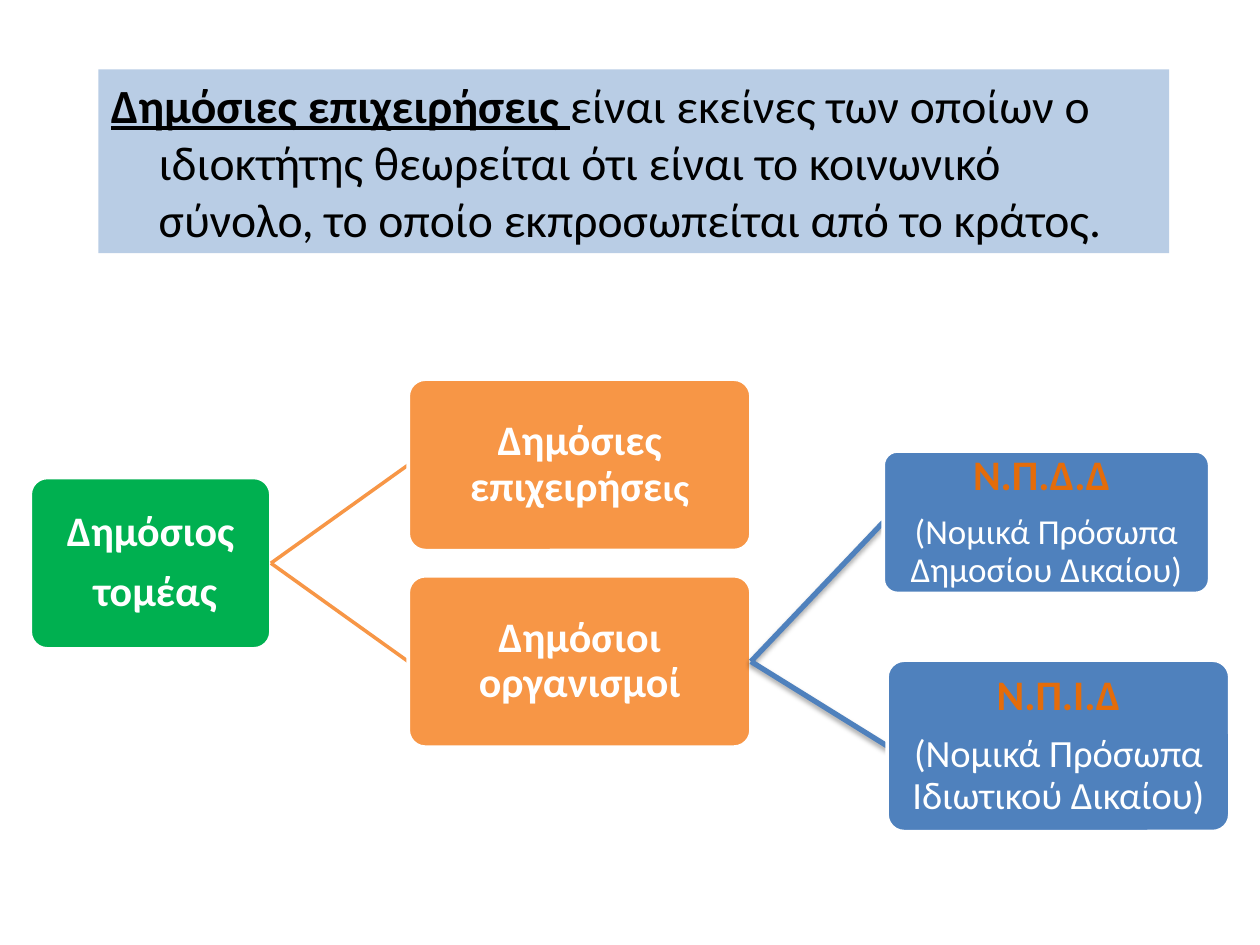
from lxml.etree import SubElement
from pptx import Presentation
from pptx.dml.color import RGBColor
from pptx.enum.shapes import MSO_CONNECTOR as Connector, MSO_SHAPE as Shape
from pptx.enum.text import MSO_ANCHOR as Anchor, MSO_AUTO_SIZE as AutoSize, PP_ALIGN as Align
from pptx.oxml.ns import qn
from pptx.util import Inches, Pt

FONT = "Calibri"
WHITE, BLACK, GREEN, ORANGE, BLUE = "FFFFFF", "000000", "00B050", "F79646", "4F81BD"
ACCENT, PALE_BLUE = "E46C0A", "B9CDE5"
HEADING = {"size": 24, "bold": True, "color": WHITE}
LEGAL = {**HEADING, "color": ACCENT}

DEFINITION = [
    ("Δημόσιες επιχειρήσεις ", {"size": 27.2, "color": BLACK, "bold": True, "underline": True}),
    ("είναι εκείνες των οποίων ο ιδιοκτήτης θεωρείται ότι είναι το κοινωνικό "
     "σύνολο, το οποίο εκπροσωπείται από το κράτος.", {"size": 27.2, "color": BLACK}),
]

# Each node: name, parent, fill, (left, top, width, height), paragraphs of spans
NODES = [
    ("sector", None, GREEN, (0.24, 3.79, 1.91, 1.36),
     [[("Δημόσιος", HEADING)], [(" τομέας", HEADING)]]),
    ("enterprises", "sector", ORANGE, (3.24, 3.01, 2.72, 1.36),
     [[("Δημόσιες επιχειρήσε", HEADING), ("ις", {**HEADING, "size": 22})]]),
    ("organisations", "sector", ORANGE, (3.24, 4.57, 2.72, 1.36),
     [[("Δημόσιοι οργανισμοί", HEADING)]]),
    ("public law", "organisations", BLUE, (7.01, 3.58, 2.59, 1.13),
     [[("Ν.Π.Δ.Δ ", LEGAL)],
      [("(Νομικά Πρόσωπα Δημοσίου Δικαίου)", {"size": 20, "color": WHITE})]]),
    ("private law", "organisations", BLUE, (7.04, 5.24, 2.72, 1.36),
     [[("Ν.Π.Ι.Δ", LEGAL)],
      [("(Νομικά Πρόσωπα Ιδιωτικού Δικαίου)", {"size": 22, "color": WHITE})]]),
]
LINE_WIDTH = {ORANGE: 2, BLUE: 3}
SHADOW = {"blurRad": Pt(3.1), "dist": Pt(1.8), "dir": 90 * 60000, "rotWithShape": 0}
RIGHT_SITE = 3


def paint(color_format, value):
    color_format.rgb = RGBColor.from_string(value)


def fill_with(shape, value):
    shape.fill.solid()
    paint(shape.fill.fore_color, value)


def add_spans(para, spans):
    for text, style in spans:
        span = para.add_run()
        span.text = text
        values = {"name": FONT, "bold": False, "underline": False, **style}
        paint(span.font.color, values.pop("color"))
        values["size"] = Pt(values["size"])
        for name, value in values.items():
            setattr(span.font, name, value)


def add_definition(page):
    body = page.placeholders[1]
    body.left, body.top, body.width, body.height = map(Inches, (0.78, 0.55, 8.5, 1.46))
    fill_with(body, PALE_BLUE)
    body.text_frame.auto_size = AutoSize.NONE
    para = body.text_frame.paragraphs[0]
    properties = para._p.get_or_add_pPr()
    properties.set("marL", str(Inches(0.38)))
    properties.set("indent", str(-Inches(0.38)))
    SubElement(properties, qn("a:buNone"))
    para.space_before = Pt(0)
    add_spans(para, DEFINITION)


def add_branch(page, parent, place, color):
    """Draw a line from the parent's right side to the left side of place."""
    left, top, _, height = place
    branch = page.shapes.add_connector(
        Connector.STRAIGHT, 0, 0, Inches(left), Inches(top + height / 2))
    branch.begin_connect(parent, RIGHT_SITE)
    paint(branch.line.color, color)
    branch.line.width = Pt(LINE_WIDTH[color])
    effects = SubElement(branch._element.spPr, qn("a:effectLst"))
    if color == BLUE:
        shadow = SubElement(effects, qn("a:outerShdw"),
                            {key: str(value) for key, value in SHADOW.items()})
        tint = SubElement(shadow, qn("a:srgbClr"), val=BLACK)
        SubElement(tint, qn("a:alpha"), val="35000")


def add_node(page, place, color, paragraphs):
    box = page.shapes.add_shape(Shape.ROUNDED_RECTANGLE, *map(Inches, place))
    box.adjustments[0] = 0.1
    box.shadow.inherit = False
    fill_with(box, color)
    paint(box.line.color, WHITE)
    box.line.width = Pt(2)
    frame = box.text_frame
    frame.word_wrap = True
    frame.vertical_anchor = Anchor.MIDDLE
    for side in ("left", "top", "right", "bottom"):
        setattr(frame, f"margin_{side}", Inches(0.02))
    for index, spans in enumerate(paragraphs):
        para = frame.add_paragraph() if index else frame.paragraphs[0]
        para.alignment = Align.CENTER
        para.line_spacing = 0.9
        para.space_after = Pt(round(0.35 * spans[0][1]["size"], 1))
        add_spans(para, spans)
    return box


def main():
    deck = Presentation()
    deck.slide_width, deck.slide_height = Inches(10), Inches(7.5)
    page = deck.slides.add_slide(deck.slide_layouts[1])
    title = page.shapes.title._element
    title.getparent().remove(title)
    add_definition(page)
    boxes = {}
    for name, parent, color, place, paragraphs in NODES:
        if parent:
            add_branch(page, boxes[parent], place, color)
        boxes[name] = add_node(page, place, color, paragraphs)
    deck.save("out.pptx")


if __name__ == "__main__":
    main()
